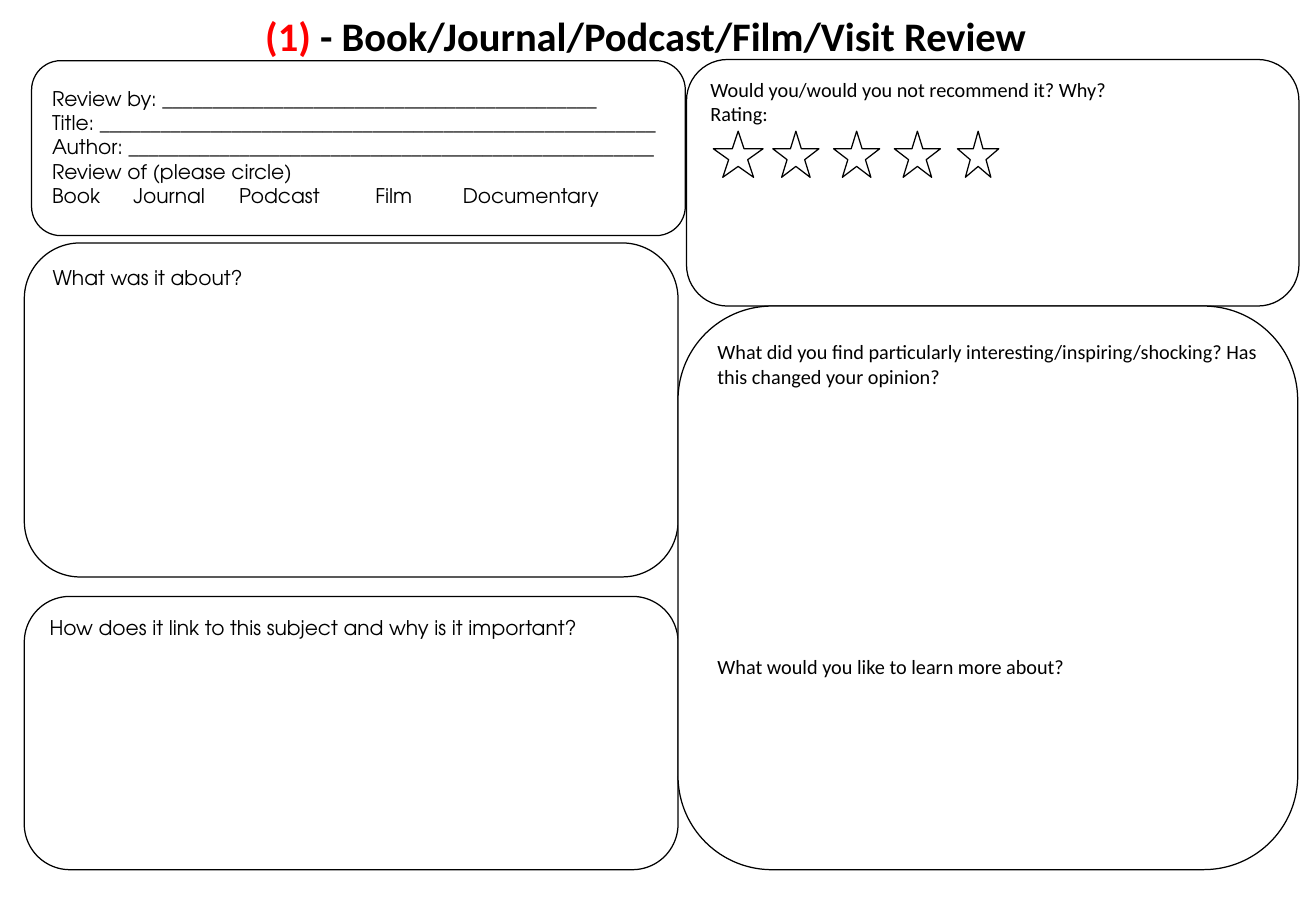
from lxml import etree
from pptx import Presentation
from pptx.dml.color import RGBColor
from pptx.enum.shapes import MSO_SHAPE
from pptx.enum.text import MSO_ANCHOR, PP_ALIGN
from pptx.oxml.ns import qn
from pptx.util import Inches, Pt

BLACK, WHITE, RED = "000000", "FFFFFF", "FF0000"
BODY_FONT, ROUND_FONT = "Calibri", "TeX Gyre Adventor"


def color(hex_string):
    return RGBColor.from_string(hex_string)


class ReviewSheet:
    """Holds the sheet's style and the slide being filled."""

    def __init__(self, slide, text_size=12, line_width=0.75):
        self.slide = slide
        self.text_size = text_size
        self.line_width = line_width

    def outline(self, kind, box, fill=WHITE, line=BLACK):
        shape = self.slide.shapes.add_shape(kind, *map(Inches, box))
        shape.shadow.inherit = False
        if fill:
            shape.fill.solid()
            shape.fill.fore_color.rgb = color(fill)
        else:
            shape.fill.background()
        if line:
            shape.line.color.rgb = color(line)
            shape.line.width = Pt(self.line_width)
        else:
            shape.line.fill.background()
        return shape

    def style_run(self, run, font, size, hex_color=BLACK, bold=False):
        run.font.name = font
        run.font.size = Pt(size)
        run.font.bold = bold
        run.font.color.rgb = color(hex_color)

    def set_lines(self, shape, lines, font):
        frame = shape.text_frame
        frame.word_wrap = True
        frame.vertical_anchor = MSO_ANCHOR.TOP
        frame.text = "\n".join(lines)
        for paragraph in frame.paragraphs:
            paragraph.alignment = PP_ALIGN.LEFT
            for run in paragraph.runs:
                self.style_run(run, font, self.text_size)
        return frame.paragraphs

    def panel(self, box, lines=(), font=BODY_FONT, fill=WHITE):
        shape = self.outline(MSO_SHAPE.FLOWCHART_ALTERNATE_PROCESS, box, fill)
        return self.set_lines(shape, lines, font)

    def text_block(self, box, lines, font):
        return self.set_lines(self.outline(MSO_SHAPE.RECTANGLE, box, line=None), lines, font)

    def title(self, box, parts, size=24):
        heading = self.text_block(box, [], BODY_FONT)[0]
        heading.alignment = PP_ALIGN.CENTER
        for text, hex_color in parts:
            run = heading.add_run()
            run.text = text
            self.style_run(run, BODY_FONT, size, hex_color, bold=True)

    def set_tabs(self, paragraph, positions):
        tabs = etree.SubElement(paragraph._p.get_or_add_pPr(), qn("a:tabLst"))
        for position in positions:
            etree.SubElement(tabs, qn("a:tab"), pos=str(Inches(position)), algn="l")

    def star(self, left, width):
        self.outline(MSO_SHAPE.STAR_5_POINT, (left, 1.08, width, 0.38))


def main():
    prs = Presentation()
    prs.slide_width, prs.slide_height = Inches(10.83), Inches(7.5)
    sheet = ReviewSheet(prs.slides.add_slide(prs.slide_layouts[6]))

    sheet.panel((5.65, 0.49, 5.04, 2.03),
                ["Would you/would you not recommend it? Why?", "Rating:"])
    sheet.panel((0.2, 4.91, 5.38, 2.25),
                ["How does it link to this subject and why is it important?"], ROUND_FONT)
    sheet.panel((0.2, 2, 5.38, 2.75), ["What was it about?"], ROUND_FONT)
    opinion, learn_more = sheet.panel((5.58, 2.52, 5.1, 4.64), [
        "What did you find particularly interesting/inspiring/shocking? "
        "Has this changed your opinion?",
        "What would you like to learn more about?",
    ])
    learn_more.space_before = Pt(158)

    sheet.title((1.98, 0.04, 6.67, 0.4),
                [("(1)", RED), (" - Book/Journal/Podcast/Film/Visit Review", BLACK)])

    media_kinds = ["Book", "Journal", "Podcast", "Film", "Documentary"]
    details = sheet.text_block((0.33, 0.66, 5.25, 1.03), [
        "Review by: " + "_" * 43,
        "Title: " + "_" * 55,
        "Author: " + "_" * 52,
        "Review of (please circle)",
        "\t".join(media_kinds),
    ], ROUND_FONT)
    sheet.set_tabs(details[-1], [0.67, 1.54, 2.66, 3.38])
    sheet.panel((0.26, 0.5, 5.38, 1.44), fill=None)

    for left, width in [(5.87, 0.41), (6.36, 0.38), (6.86, 0.38), (7.36, 0.38), (7.88, 0.34)]:
        sheet.star(left, width)

    prs.save("out.pptx")


if __name__ == "__main__":
    main()
